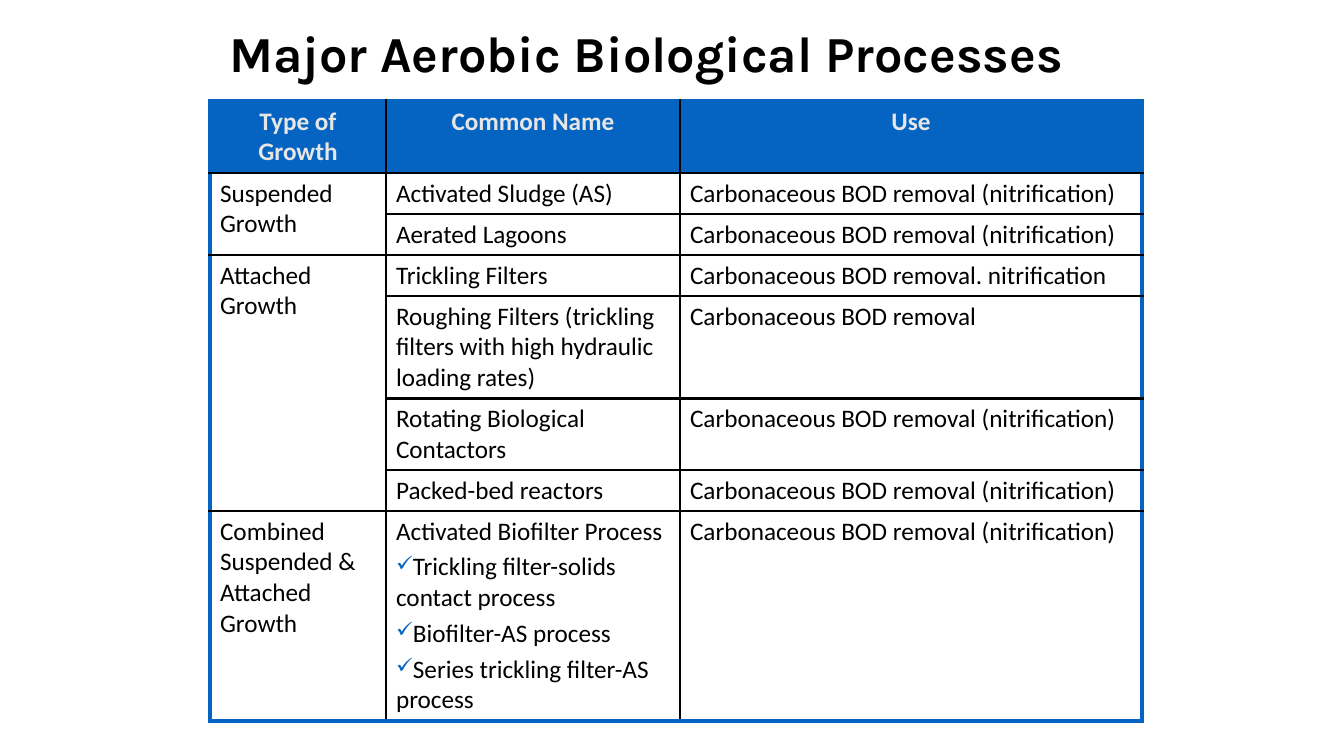
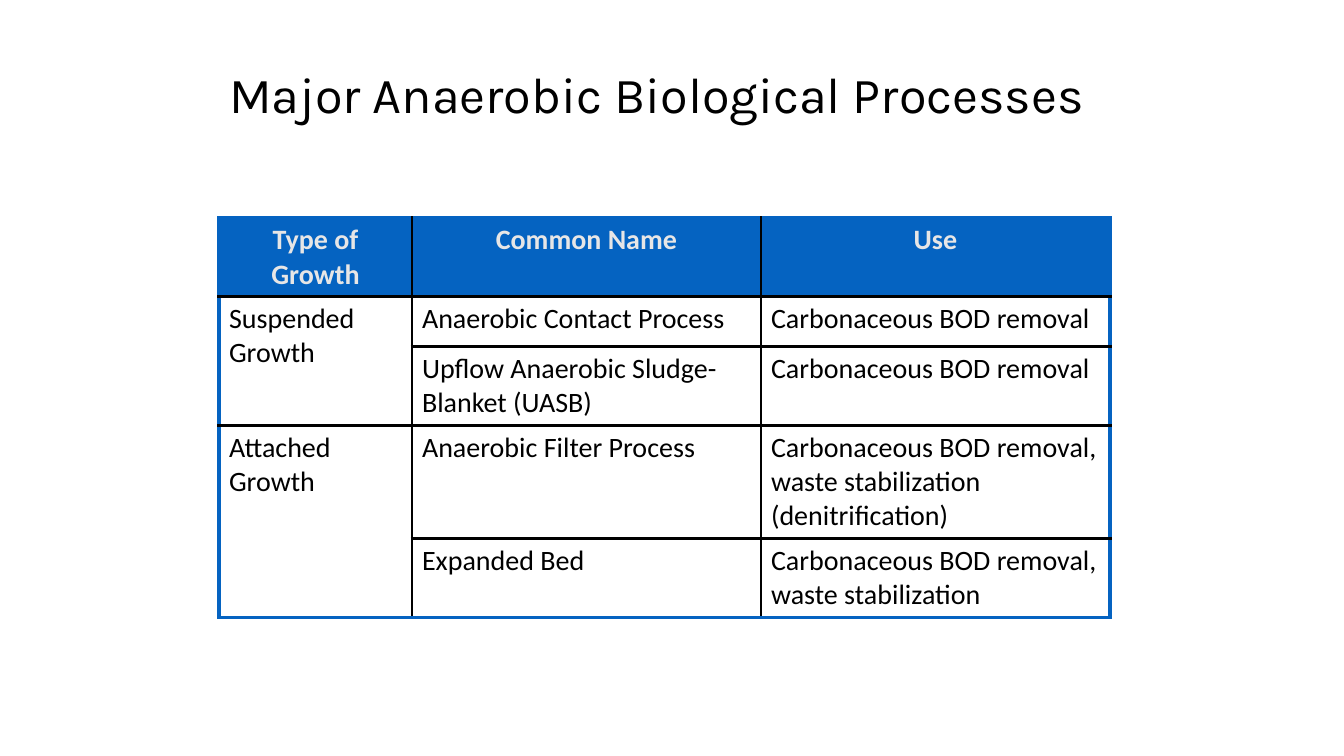
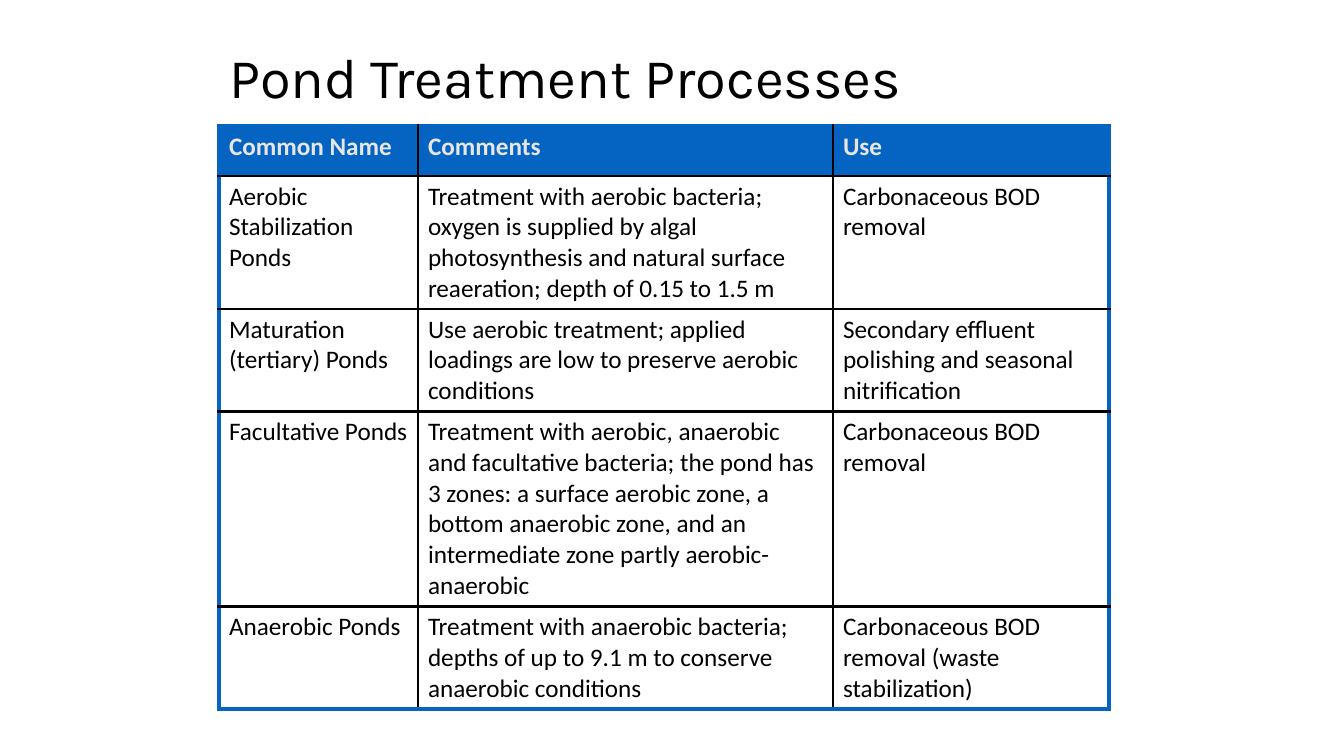
from lxml import etree
from pptx import Presentation
from pptx.dml.color import RGBColor
from pptx.enum.text import MSO_ANCHOR, MSO_AUTO_SIZE, PP_ALIGN
from pptx.oxml.ns import qn
from pptx.util import Pt

LEFT, CENTER = PP_ALIGN.LEFT, PP_ALIGN.CENTER
MIDDLE = MSO_ANCHOR.MIDDLE
NO_AUTOFIT = MSO_AUTO_SIZE.NONE

# Shared style
PX = 914400 / 100.8
BLUE, BLACK, PALE = "0563C1", "000000", "E7E6E6"
TITLE_FONT, TABLE_FONT = "Karla", "Calibri"
TITLE_LEFT, TITLE_WIDTH = 219, 907
OUTER_LINE, INNER_LINE = (BLUE, 3), (BLACK, 2.25)
CHECK = "✓"
TITLE_ONLY = 5


def px(length):
    return round(length * PX)


def format_runs(paragraph, font_name, size, color, bold):
    for run in paragraph.runs:
        run.font.name = font_name
        run.font.size = Pt(size)
        run.font.bold = bold
        run.font.color.rgb = RGBColor.from_string(color)


# Content: None continues the merged cell above
REMOVAL = "Carbonaceous BOD removal"
REMOVAL_NITRIFICATION = REMOVAL + " (nitrification)"
GROWTH_HEADER = ["Type of Growth", "Common Name", "Use"]

slides = [
    {
        "title": "Major Aerobic Biological Processes",
        "title_top": 8, "title_height": 96, "title_size": 36, "title_bold": True,
        "left": 210, "top": 101, "text_size": 18, "header_align": CENTER,
        "columns": [176, 294, 462],
        "heights": [72, 41, 41, 41, 102, 71, 41, 210],
        "rows": [
            GROWTH_HEADER,
            ["Suspended Growth", "Activated Sludge (AS)", REMOVAL_NITRIFICATION],
            [None, "Aerated Lagoons", REMOVAL_NITRIFICATION],
            ["Attached Growth", "Trickling Filters", REMOVAL + ". nitrification"],
            [None, "Roughing Filters (trickling filters with high hydraulic loading rates)",
             REMOVAL],
            [None, "Rotating Biological Contactors", REMOVAL_NITRIFICATION],
            [None, "Packed-bed reactors", REMOVAL_NITRIFICATION],
            ["Combined Suspended & Attached Growth",
             "Activated Biofilter Process\nTrickling filter-solids contact process\n"
             "Biofilter-AS process\nSeries trickling filter-AS process",
             REMOVAL_NITRIFICATION],
        ],
    },
    {
        "title": "Major Anaerobic Biological Processes",
        "title_top": 34, "title_height": 126, "title_size": 36, "title_bold": False,
        "left": 219, "top": 218, "text_size": 20, "header_align": CENTER,
        "columns": [193, 349, 349],
        "heights": [78, 50, 79, 113, 79],
        "rows": [
            GROWTH_HEADER,
            ["Suspended Growth", "Anaerobic Contact Process", REMOVAL],
            [None, "Upflow Anaerobic Sludge-Blanket (UASB)", REMOVAL],
            ["Attached Growth", "Anaerobic Filter Process",
             REMOVAL + ", waste stabilization (denitrification)"],
            [None, "Expanded Bed", REMOVAL + ", waste stabilization"],
        ],
    },
    {
        "title": "Pond Treatment Processes",
        "title_top": 17, "title_height": 126, "title_size": 40, "title_bold": False,
        "left": 219, "top": 126, "text_size": 18, "header_align": LEFT,
        "columns": [199, 415, 276],
        "heights": [50, 133, 102, 195, 102],
        "rows": [
            ["Common Name", "Comments", "Use"],
            ["Aerobic Stabilization Ponds",
             "Treatment with aerobic bacteria; oxygen is supplied by algal photosynthesis "
             "and natural surface reaeration; depth of 0.15 to 1.5 m",
             REMOVAL],
            ["Maturation (tertiary) Ponds",
             "Use aerobic treatment; applied loadings are low to preserve aerobic conditions",
             "Secondary effluent polishing and seasonal nitrification"],
            ["Facultative Ponds",
             "Treatment with aerobic, anaerobic and facultative bacteria; the pond has "
             "3 zones: a surface aerobic zone, a bottom anaerobic zone, and an "
             "intermediate zone partly aerobic-anaerobic",
             REMOVAL],
            ["Anaerobic Ponds",
             "Treatment with anaerobic bacteria; depths of up to 9.1 m to conserve "
             "anaerobic conditions",
             REMOVAL + " (waste stabilization)"],
        ],
    },
]

presentation = Presentation()
presentation.slide_width = px(1344)
presentation.slide_height = px(756)

for content in slides:
    slide = presentation.slides.add_slide(presentation.slide_layouts[TITLE_ONLY])

    # Title
    title = slide.shapes.title
    title.left, title.top = px(TITLE_LEFT), px(content["title_top"])
    title.width, title.height = px(TITLE_WIDTH), px(content["title_height"])
    title.text_frame.text = content["title"]
    title.text_frame.auto_size = NO_AUTOFIT
    title.text_frame.vertical_anchor = MIDDLE
    paragraph = title.text_frame.paragraphs[0]
    paragraph.alignment = LEFT
    paragraph.line_spacing = 0.9
    format_runs(paragraph, TITLE_FONT, content["title_size"], BLACK, content["title_bold"])

    # Table grid
    rows, columns, heights = content["rows"], content["columns"], content["heights"]
    table = slide.shapes.add_table(
        len(rows), len(columns), px(content["left"]), px(content["top"]),
        px(sum(columns)), px(sum(heights))).table
    table.first_row = table.horz_banding = False
    for column, width in zip(table.columns, columns):
        column.width = px(width)
    for row, height in zip(table.rows, heights):
        row.height = px(height)

    for row_index, texts in enumerate(rows):
        is_header = row_index == 0
        for column_index, text in enumerate(texts):
            cell = table.cell(row_index, column_index)

            # Merge with the continued cells below
            end_row = row_index + 1
            while text and end_row < len(rows) and rows[end_row][column_index] is None:
                end_row += 1
            if end_row > row_index + 1:
                cell.merge(table.cell(end_row - 1, column_index))

            # Fill and borders: blue outside, black inside
            if is_header:
                cell.fill.solid()
                cell.fill.fore_color.rgb = RGBColor.from_string(BLUE)
            else:
                cell.fill.background()
            outer_sides = [
                ("a:lnL", column_index == 0),
                ("a:lnR", column_index == len(columns) - 1),
                ("a:lnT", is_header),
                ("a:lnB", end_row == len(rows)),
            ]
            properties = cell._tc.get_or_add_tcPr()
            for position, (side, is_outer) in enumerate(outer_sides):
                color, width = OUTER_LINE if is_outer else INNER_LINE
                line = etree.Element(qn(side), w=str(Pt(width)))
                line_fill = etree.SubElement(line, qn("a:solidFill"))
                etree.SubElement(line_fill, qn("a:srgbClr"), val=color)
                properties.insert(position, line)

            # Text, with check marks on the paragraphs after the first
            if text is None:
                continue
            cell.text_frame.text = text
            for number, paragraph in enumerate(cell.text_frame.paragraphs):
                paragraph.alignment = content["header_align"] if is_header else LEFT
                format_runs(paragraph, TABLE_FONT, content["text_size"],
                            PALE if is_header else BLACK, is_header)
                if number > 0:
                    paragraph.space_before = Pt(content["text_size"] * 0.2)
                    bullet = paragraph._p.get_or_add_pPr()
                    bullet_color = etree.SubElement(bullet, qn("a:buClr"))
                    etree.SubElement(bullet_color, qn("a:srgbClr"), val=BLUE)
                    etree.SubElement(bullet, qn("a:buSzPct"), val="85000")
                    etree.SubElement(bullet, qn("a:buChar"), char=CHECK)

presentation.save("out.pptx")
